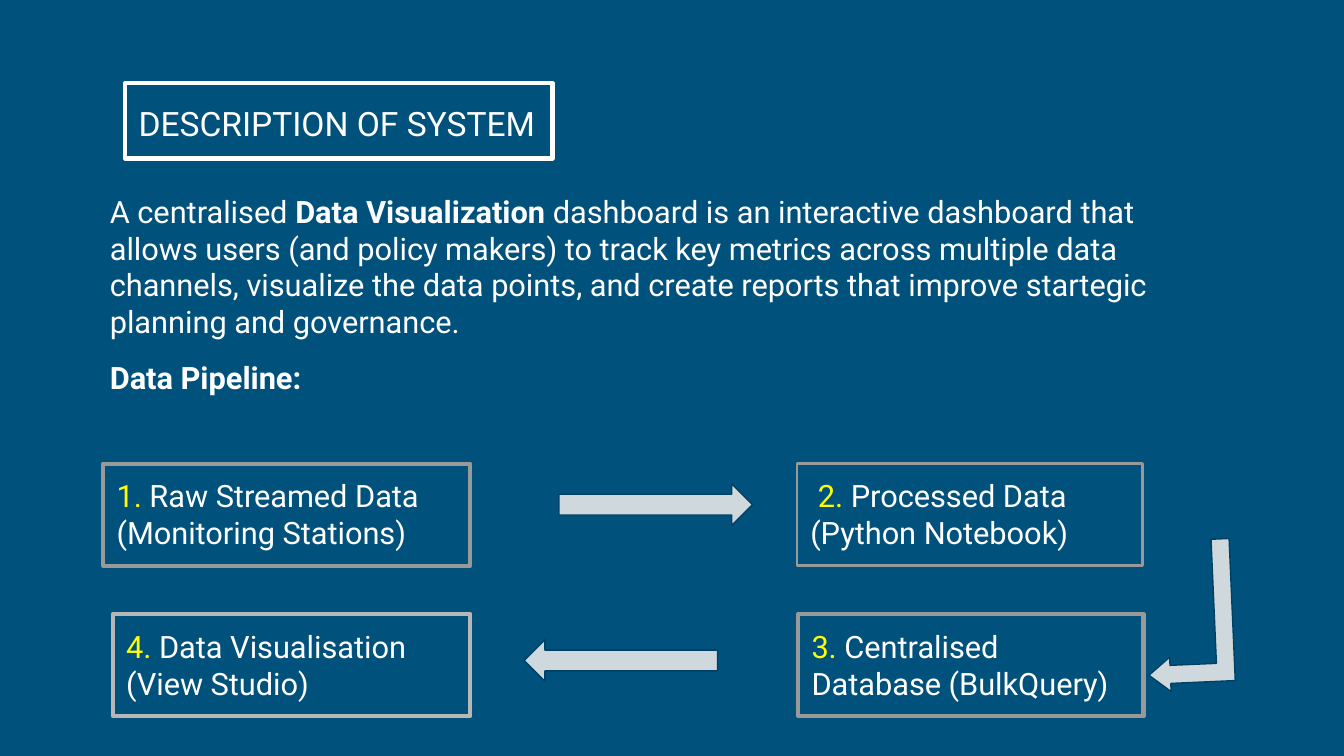
from dataclasses import dataclass
from typing import Optional

from pptx import Presentation
from pptx.dml.color import RGBColor
from pptx.enum.shapes import MSO_SHAPE
from pptx.enum.text import MSO_ANCHOR, MSO_AUTO_SIZE, PP_ALIGN
from pptx.util import Pt


@dataclass(frozen=True)
class Theme:
    font: str = "Roboto"
    background: str = "00517C"
    text: str = "FFFFFF"
    number: str = "FFFF00"
    border: str = "999999"
    light_border: str = "B7B7B7"
    arrow: str = "CFD8DC"
    arrow_edge: str = "004065"
    title_size: float = 18
    body_size: float = 16.5
    inset: float = 7.2


THEME = Theme()


@dataclass(frozen=True)
class Box:
    left: float
    top: float
    width: float
    height: float

    def lengths(self) -> tuple:
        return Pt(self.left), Pt(self.top), Pt(self.width), Pt(self.height)


@dataclass(frozen=True)
class Span:
    text: str
    color: str = THEME.text
    bold: bool = False
    size: float = THEME.body_size


@dataclass(frozen=True)
class Stage:
    box: Box
    number: str
    label: str
    border: str = THEME.border
    border_width: float = 2.25


@dataclass(frozen=True)
class Arrow:
    kind: MSO_SHAPE
    box: Box
    adjustments: tuple = (0.5, 0.5)
    rotation: float = 0
    flipped: bool = False


def rgb(color: str) -> RGBColor:
    return RGBColor.from_string(color)


def set_frame(frame) -> None:
    frame.word_wrap = True
    frame.auto_size = MSO_AUTO_SIZE.NONE
    frame.vertical_anchor = MSO_ANCHOR.TOP
    frame.margin_left = frame.margin_right = Pt(THEME.inset)
    frame.margin_top = frame.margin_bottom = Pt(THEME.inset)


def add_spans(paragraph, *spans: Span) -> None:
    paragraph.alignment = PP_ALIGN.LEFT
    for span in spans:
        run = paragraph.add_run()
        run.text = span.text
        run.font.name = THEME.font
        run.font.size = Pt(span.size)
        run.font.bold = span.bold
        run.font.color.rgb = rgb(span.color)


def set_outline(shape, color: str, width: float, fill: Optional[str] = None) -> None:
    if fill:
        shape.fill.solid()
        shape.fill.fore_color.rgb = rgb(fill)
    else:
        shape.fill.background()
    shape.line.color.rgb = rgb(color)
    shape.line.width = Pt(width)


def add_title(slide, box: Box, text: str) -> None:
    title = slide.shapes.title
    title.left, title.top, title.width, title.height = box.lengths()
    set_outline(title, THEME.text, 2.25)
    set_frame(title.text_frame)
    heading = title.text_frame.paragraphs[0]
    heading.line_spacing = 1.15
    add_spans(heading, Span(text, size=THEME.title_size))


def add_description(slide, box: Box) -> None:
    frame = slide.shapes.add_textbox(*box.lengths()).text_frame
    set_frame(frame)
    add_spans(
        frame.paragraphs[0],
        Span("A centralised "),
        Span("Data Visualization ", bold=True),
        Span(
            "dashboard is an interactive dashboard that allows users "
            "(and policy makers) to track key metrics across multiple data "
            "channels, visualize the data points, and create reports that "
            "improve startegic planning and governance."
        ),
    )
    pipeline_heading = frame.add_paragraph()
    pipeline_heading.space_before = Pt(10)
    add_spans(pipeline_heading, Span("Data Pipeline:", bold=True))


def add_stage(slide, stage: Stage) -> None:
    panel = slide.shapes.add_shape(MSO_SHAPE.RECTANGLE, *stage.box.lengths())
    panel.shadow.inherit = False
    set_outline(panel, stage.border, stage.border_width)
    set_frame(panel.text_frame)
    add_spans(
        panel.text_frame.paragraphs[0],
        Span(stage.number, THEME.number),
        Span(stage.label),
    )


def add_arrow(slide, arrow: Arrow) -> None:
    pointer = slide.shapes.add_shape(arrow.kind, *arrow.box.lengths())
    pointer.shadow.inherit = False
    set_outline(pointer, THEME.arrow_edge, 0.75, THEME.arrow)
    for index, value in enumerate(arrow.adjustments):
        pointer.adjustments[index] = value
    pointer.rotation = arrow.rotation
    if arrow.flipped:
        pointer.element.spPr.xfrm.set("flipH", "1")


UPPER_ROW, LOWER_ROW, STAGE_HEIGHT = 248.4, 329, 54.7

STAGES = (
    Stage(Box(55.4, UPPER_ROW, 196.6, STAGE_HEIGHT), "1.",
          " Raw Streamed Data (Monitoring Stations)"),
    Stage(Box(427, UPPER_ROW, 185, STAGE_HEIGHT), " 2.",
          " Processed Data (Python Notebook)", border_width=1.5),
    Stage(Box(60.5, LOWER_ROW, 191.5, STAGE_HEIGHT), "4.",
          " Data Visualisation (View Studio)", border=THEME.light_border),
    Stage(Box(427.7, LOWER_ROW, 185, STAGE_HEIGHT), "3.",
          " Centralised Database (BulkQuery)"),
)

ARROWS = (
    Arrow(MSO_SHAPE.RIGHT_ARROW, Box(299.5, 259.2, 103.7, 22.3)),
    Arrow(MSO_SHAPE.LEFT_ARROW, Box(280.8, 342.7, 103.7, 22.3)),
    Arrow(MSO_SHAPE.BENT_UP_ARROW, Box(596.9, 306.7, 80.6, 46.1),
          (0.21, 0.2, 0.25), rotation=267.5, flipped=True),
)


def main() -> None:
    deck = Presentation()
    deck.slide_width, deck.slide_height = Pt(720), Pt(405)
    slide = deck.slides.add_slide(deck.slide_layouts.get_by_name("Title Only"))
    slide.background.fill.solid()
    slide.background.fill.fore_color.rgb = rgb(THEME.background)

    add_title(slide, Box(67, 44.6, 229, 40.3), "DESCRIPTION OF SYSTEM")
    add_description(slide, Box(51.8, 95.8, 607.7, 275))
    for stage in STAGES:
        add_stage(slide, stage)
    for arrow in ARROWS:
        add_arrow(slide, arrow)

    deck.save("out.pptx")


if __name__ == "__main__":
    main()
